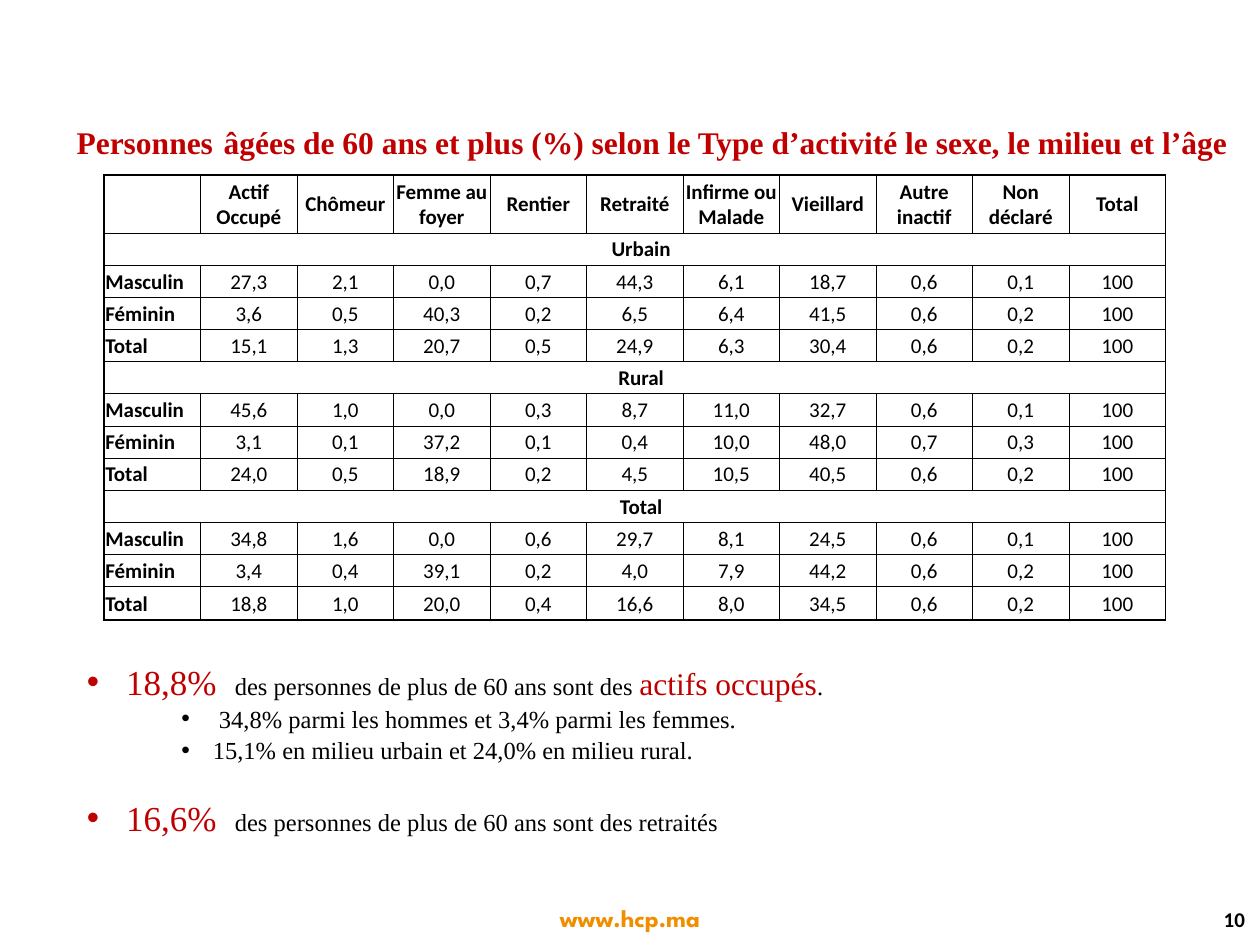
from lxml.etree import SubElement
from pptx import Presentation
from pptx.dml.color import RGBColor
from pptx.enum.text import MSO_ANCHOR, PP_ALIGN
from pptx.oxml import parse_xml
from pptx.oxml.ns import nsdecls, qn
from pptx.util import Pt

RED, BLACK, ORANGE = "C00000", "000000", "F18E00"
SERIF, SANS = "Times New Roman", "Calibri"
THIN, THICK = 0.5, 1

HEADINGS = ["", "Actif Occupé", "Chômeur", "Femme au foyer", "Rentier", "Retraité",
            "Infirme ou Malade", "Vieillard", "Autre inactif", "Non déclaré", "Total"]
SECTIONS = {
    "Urbain": ["Masculin 27,3 2,1 0,0 0,7 44,3 6,1 18,7 0,6 0,1 100",
               "Féminin 3,6 0,5 40,3 0,2 6,5 6,4 41,5 0,6 0,2 100",
               "Total 15,1 1,3 20,7 0,5 24,9 6,3 30,4 0,6 0,2 100"],
    "Rural": ["Masculin 45,6 1,0 0,0 0,3 8,7 11,0 32,7 0,6 0,1 100",
              "Féminin 3,1 0,1 37,2 0,1 0,4 10,0 48,0 0,7 0,3 100",
              "Total 24,0 0,5 18,9 0,2 4,5 10,5 40,5 0,6 0,2 100"],
    "Total": ["Masculin 34,8 1,6 0,0 0,6 29,7 8,1 24,5 0,6 0,1 100",
              "Féminin 3,4 0,4 39,1 0,2 4,0 7,9 44,2 0,6 0,2 100",
              "Total 18,8 1,0 20,0 0,4 16,6 8,0 34,5 0,6 0,2 100"],
}


def color(hex_code):
    return RGBColor.from_string(hex_code)


def add_text(paragraph, text, size=12, font=SANS, fill=BLACK, bold=False, align=None):
    run = paragraph.add_run()
    run.text = text
    run.font.size, run.font.name, run.font.bold = Pt(size), font, bold
    run.font.color.rgb = color(fill)
    if align is not None:
        paragraph.alignment = align


def add_frame(slide, box, wrap=True, anchor=MSO_ANCHOR.TOP):
    frame = slide.shapes.add_textbox(*map(Pt, box)).text_frame
    frame.word_wrap, frame.vertical_anchor = wrap, anchor
    return frame


def add_title(slide, box):
    title = add_frame(slide, box, wrap=False).paragraphs[0]
    add_text(title, "Personnes", size=18, font=SERIF, fill=RED, bold=True)
    add_text(title, " ", size=24, font=SERIF, fill=RED)
    add_text(title, "âgées de 60 ans et plus (%) selon le Type d’activité le sexe, "
             "le milieu et l’âge", size=18, font=SERIF, fill=RED, bold=True)


def set_borders(cell, **widths):
    """Draw the sides named L, R, T and B, given in that order."""
    properties = cell._tc.get_or_add_tcPr()
    for position, (side, width) in enumerate(widths.items()):
        properties.insert(position, parse_xml(
            f'<a:ln{side} {nsdecls("a")} w="{Pt(width)}"><a:solidFill>'
            f'<a:srgbClr val="{BLACK}"/></a:solidFill></a:ln{side}>'))


def add_activity_table(slide, box):
    rows = [HEADINGS]
    for section, lines in SECTIONS.items():
        rows += [[section], *(line.split() for line in lines)]
    last_row, last_column = len(rows) - 1, len(HEADINGS) - 1
    left, top, width, height = box
    table = slide.shapes.add_table(len(rows), len(HEADINGS), *map(Pt, box)).table
    table.first_row = table.horz_banding = False

    header_height, closing_height = 33.1, 19.2
    body_height = (height - header_height - closing_height) / (len(rows) - 2)
    for column in table.columns:
        column.width = Pt(width / len(HEADINGS))
    for r, row in enumerate(table.rows):
        row.height = Pt({0: header_height, last_row: closing_height}.get(r, body_height))

    for r, values in enumerate(rows):
        is_section = len(values) == 1
        if is_section:
            table.cell(r, 0).merge(table.cell(r, last_column))
        for c in range(len(HEADINGS)):
            cell = table.cell(r, c)
            cell.fill.background()
            cell.vertical_anchor = MSO_ANCHOR.MIDDLE
            cell.margin_left = Pt(8 if is_section else 0.72)
            cell.margin_top = cell.margin_right = Pt(0.72)
            cell.margin_bottom = 0
            sides = {"L": THIN if c else THICK,
                     "R": THICK if c == last_column or is_section else THIN,
                     "T": THIN if r else THICK,
                     "B": THICK if r == last_row else THIN}
            if is_section and c:
                del sides["L"]
                if c < last_column:
                    del sides["R"]
            set_borders(cell, **sides)
            if c < len(values) and values[c]:
                is_label = c == 0 and not is_section
                add_text(cell.text_frame.paragraphs[0], values[c], bold=r == 0 or c == 0,
                         align=PP_ALIGN.LEFT if is_label else PP_ALIGN.CENTER)


def set_bullet(paragraph, margin, hanging, tab=None):
    properties = paragraph._p.get_or_add_pPr()
    properties.set("marL", str(Pt(margin)))
    properties.set("indent", str(Pt(-hanging)))
    SubElement(properties, qn("a:buFont"), typeface="Arial")
    SubElement(properties, qn("a:buChar"), char="•")
    if tab:
        tabs = SubElement(properties, qn("a:tabLst"))
        SubElement(tabs, qn("a:tab"), pos=str(Pt(tab)), algn="l")
    paragraph.line_spacing = 1.06


def add_findings(slide, box):
    frame = add_frame(slide, box)
    plain = {"size": 14, "font": SERIF}
    figure = {"size": 20, "font": SERIF, "fill": RED}

    active = frame.paragraphs[0]
    set_bullet(active, 22.5, 22.5, tab=84.6)
    add_text(active, "18,8%", **figure)
    add_text(active, "\tdes personnes de plus de 60 ans sont des ", **plain)
    add_text(active, "actifs occupés", size=18, font=SERIF, fill=RED)
    add_text(active, ".", **plain)

    for detail_text in (" 34,8% parmi les hommes et 3,4% parmi les femmes.",
                        "15,1% en milieu urbain et 24,0% en milieu rural."):
        detail = frame.add_paragraph()
        detail.level = 2
        set_bullet(detail, 72, 18)
        add_text(detail, detail_text, **plain)

    retired = frame.add_paragraph()
    set_bullet(retired, 22.5, 22.5, tab=84.6)
    retired.space_before = Pt(17)
    add_text(retired, "16,6%", **figure)
    add_text(retired, "\tdes personnes de plus de 60 ans sont des retraités", **plain)


def add_footer(slide, address_box, number_box):
    address = add_frame(slide, address_box).paragraphs[0]
    add_text(address, "www.hcp.ma", size=14, font="League Spartan", fill=ORANGE,
             bold=True, align=PP_ALIGN.CENTER)
    number = add_frame(slide, number_box, anchor=MSO_ANCHOR.MIDDLE).paragraphs[0]
    add_text(number, "10", bold=True, align=PP_ALIGN.RIGHT)


def main():
    deck = Presentation()
    deck.slide_width, deck.slide_height = Pt(720), Pt(540)
    slide = deck.slides.add_slide(deck.slide_layouts[6])
    add_footer(slide, (275, 512.6, 170, 23.8), (609.1, 512.6, 109.4, 25.2))
    add_findings(slide, (42.5, 372.2, 663.1, 106.6))
    add_activity_table(slide, (59.5, 100.1, 606.7, 254.5))
    add_title(slide, (36.7, 60.5, 683.3, 36))
    deck.save("out.pptx")


if __name__ == "__main__":
    main()
